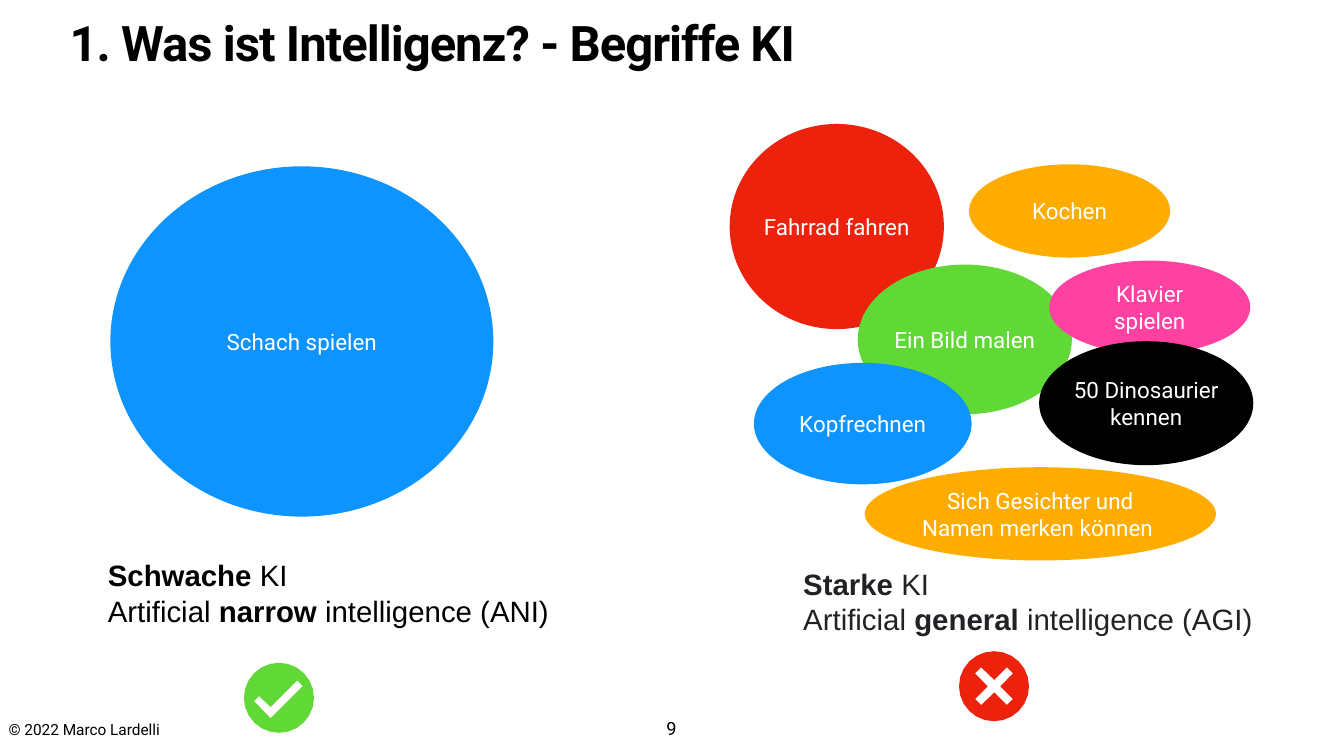
from dataclasses import dataclass
from math import cos, pi, sin

from pptx import Presentation
from pptx.dml.color import RGBColor
from pptx.enum.shapes import MSO_SHAPE as Shape
from pptx.enum.text import MSO_ANCHOR as Anchor, MSO_AUTO_SIZE as AutoSize, PP_ALIGN as Align
from pptx.util import Inches, Pt


@dataclass(frozen=True)
class Theme:
    """Colours, fonts and type sizes of the slide."""
    black: str = "000000"
    white: str = "FFFFFF"
    ink: str = "212226"
    blue: str = "0E94FF"
    red: str = "ED220D"
    orange: str = "FEAD00"
    green: str = "60D937"
    pink: str = "FF42A1"
    main_font: str = "Roboto"
    caption_font: str = "Arial"
    title: int = 70
    caption: int = 42
    bubble: int = 32
    number: int = 26
    copyright: int = 22


THEME = Theme()
BADGE_SIZE = 1.39
CHECK = [(1.06, 0.35), (1.17, 0.46), (0.53, 1.1), (0.2, 0.76), (0.3, 0.66), (0.53, 0.88)]
CROSS = [(0.44, 0.32), (0.7, 0.57), (0.95, 0.32), (1.07, 0.44), (0.82, 0.7), (1.07, 0.95),
         (0.95, 1.07), (0.7, 0.82), (0.44, 1.07), (0.32, 0.95), (0.57, 0.7), (0.32, 0.44)]

WEAK_AI = {
    "bubbles": [("Schach spielen", THEME.blue, (0.11, 0, 7.6, 6.95))],
    "caption": ((0, 7.71, 8.88, 1.5), THEME.black,
                [[("Schwache", True), (" KI", False)],
                 [("Artificial ", False), ("narrow", True), (" intelligence (ANI)", False)]]),
    "badge": (2.76, 9.85, THEME.green, CHECK),
}
STRONG_AI = {
    "bubbles": [
        ("Fahrrad fahren", THEME.red, (0, 0, 4.25, 4.07)),
        ("Kochen", THEME.orange, (4.75, 0.8, 3.99, 1.85)),
        ("Ein Bild malen", THEME.green, (2.54, 2.79, 4.25, 2.97)),
        ("Klavier spielen", THEME.pink, (6.34, 2.71, 3.99, 1.85)),
        ("Kopfrechnen", THEME.blue, (0.48, 4.74, 4.32, 2.41)),
        ("50 Dinosaurier kennen", THEME.black, (6.14, 4.31, 4.25, 2.46)),
        ("Sich Gesichter und Namen merken können ", THEME.orange, (2.68, 6.81, 6.97, 1.85)),
    ],
    "caption": ((1.4, 8.72, 9.04, 1.5), THEME.ink,
                [[("Starke", True), (" KI\vArtificial ", False), ("general", True),
                  (" intelligence (AGI)", False)]]),
    "badge": (4.55, 10.46, THEME.red, CROSS),
}


def apply(target, values):
    """Set each attribute of target from a dict."""
    for name, value in values.items():
        setattr(target, name, value)


def format_frame(frame, margin=0.06, **values):
    """Give a text frame equal margins and the given settings."""
    margins = {f"margin_{side}": Inches(margin) for side in ("left", "top", "right", "bottom")}
    apply(frame, margins | values)


def add_run(paragraph, text, size, color, font=THEME.main_font, bold=False):
    """Append formatted text, breaking the line at each vertical tab."""
    for index, piece in enumerate(text.split("\v")):
        if index:
            paragraph.add_line_break()
        run = paragraph.add_run()
        run.text = piece
        apply(run.font, {"size": Pt(size), "name": font, "bold": bold})
        run.font.color.rgb = RGBColor.from_string(color)
    return run


def paint(shape, color):
    """Fill a shape flatly, without outline or shadow."""
    shape.shadow.inherit = False
    shape.fill.solid()
    shape.fill.fore_color.rgb = RGBColor.from_string(color)
    shape.line.fill.background()


def add_label(slide, box, anchor):
    """Add an unwrapped, self-sizing text box and return its frame."""
    frame = slide.shapes.add_textbox(*map(Inches, box)).text_frame
    format_frame(frame, vertical_anchor=anchor, word_wrap=False,
                 auto_size=AutoSize.SHAPE_TO_FIT_TEXT)
    return frame


def add_title(slide, box, text):
    """Place and format the title placeholder."""
    title = slide.shapes.title
    apply(title, dict(zip(("left", "top", "width", "height"), map(Inches, box))))
    format_frame(title.text_frame, vertical_anchor=Anchor.TOP, word_wrap=True,
                 auto_size=AutoSize.NONE)
    paragraph = title.text_frame.paragraphs[0]
    apply(paragraph, {"alignment": Align.LEFT, "line_spacing": 0.8, "space_before": Pt(0)})
    run = add_run(paragraph, text, THEME.title, THEME.black, bold=True)
    run.font._element.set("spc", "-140")


def add_bubble(slide, box, text, color):
    """Draw one ability as a labelled ellipse."""
    bubble = slide.shapes.add_shape(Shape.OVAL, *map(Inches, box))
    paint(bubble, color)
    format_frame(bubble.text_frame, 0.05, vertical_anchor=Anchor.MIDDLE, word_wrap=True)
    paragraph = bubble.text_frame.paragraphs[0]
    paragraph.alignment = Align.CENTER
    add_run(paragraph, text, THEME.bubble, THEME.white)


def add_caption(slide, box, color, lines):
    """Write the name of a kind of AI, one paragraph per entry."""
    frame = add_label(slide, box, Anchor.MIDDLE)
    for index, line in enumerate(lines):
        paragraph = frame.add_paragraph() if index else frame.paragraphs[0]
        for text, bold in line:
            add_run(paragraph, text, THEME.caption, color, THEME.caption_font, bold)


def add_badge(slide, left, top, color, mark):
    """Draw a disc with a mark cut out of it."""
    radius, steps = BADGE_SIZE / 2, 24
    angles = [2 * pi * step / steps for step in range(steps)]
    disc = [(radius + radius * cos(a), radius + radius * sin(a)) for a in angles]
    rim, cutout = [[(Inches(x), Inches(y)) for x, y in points] for points in (disc, mark)]
    builder = slide.shapes.build_freeform(*rim[0])
    builder.add_line_segments(rim[1:], close=True)
    builder.move_to(*cutout[0])
    builder.add_line_segments(cutout[1:], close=True)
    paint(builder.convert_to_shape(Inches(left), Inches(top)), color)


def add_panel(slide, left, top, content):
    """Place bubbles, caption and badge of one kind of AI from a corner."""
    def shift(box):
        return left + box[0], top + box[1], *box[2:]

    for text, color, box in content["bubbles"]:
        add_bubble(slide, shift(box), text, color)
    box, color, lines = content["caption"]
    add_caption(slide, shift(box), color, lines)
    add_badge(slide, *shift(content["badge"]))


def add_footer(slide, left, top):
    """Write the copyright line and the page number."""
    notice = add_label(slide, (left, top + 0.08, 3.15, 0.48), Anchor.MIDDLE).paragraphs[0]
    notice.line_spacing = 0.9
    add_run(notice, "© 2022 Marco Lardelli", THEME.copyright, THEME.black)
    number = add_label(slide, (left + 13.05, top, 0.33, 0.55), Anchor.BOTTOM).paragraphs[0]
    number.alignment = Align.CENTER
    add_run(number, "9", THEME.number, THEME.black)


def main():
    """Build the slide and save it."""
    deck = Presentation()
    apply(deck, {"slide_width": Inches(26.67), "slide_height": Inches(15)})
    slide = deck.slides.add_slide(deck.slide_layouts[5])
    add_title(slide, (1.32, 0.42, 24.03, 1.57), "1. Was ist Intelligenz? - Begriffe KI")
    add_panel(slide, 2.08, 3.3, WEAK_AI)
    add_panel(slide, 14.48, 2.46, STRONG_AI)
    add_footer(slide, 0.11, 14.17)
    deck.save("out.pptx")


if __name__ == "__main__":
    main()
